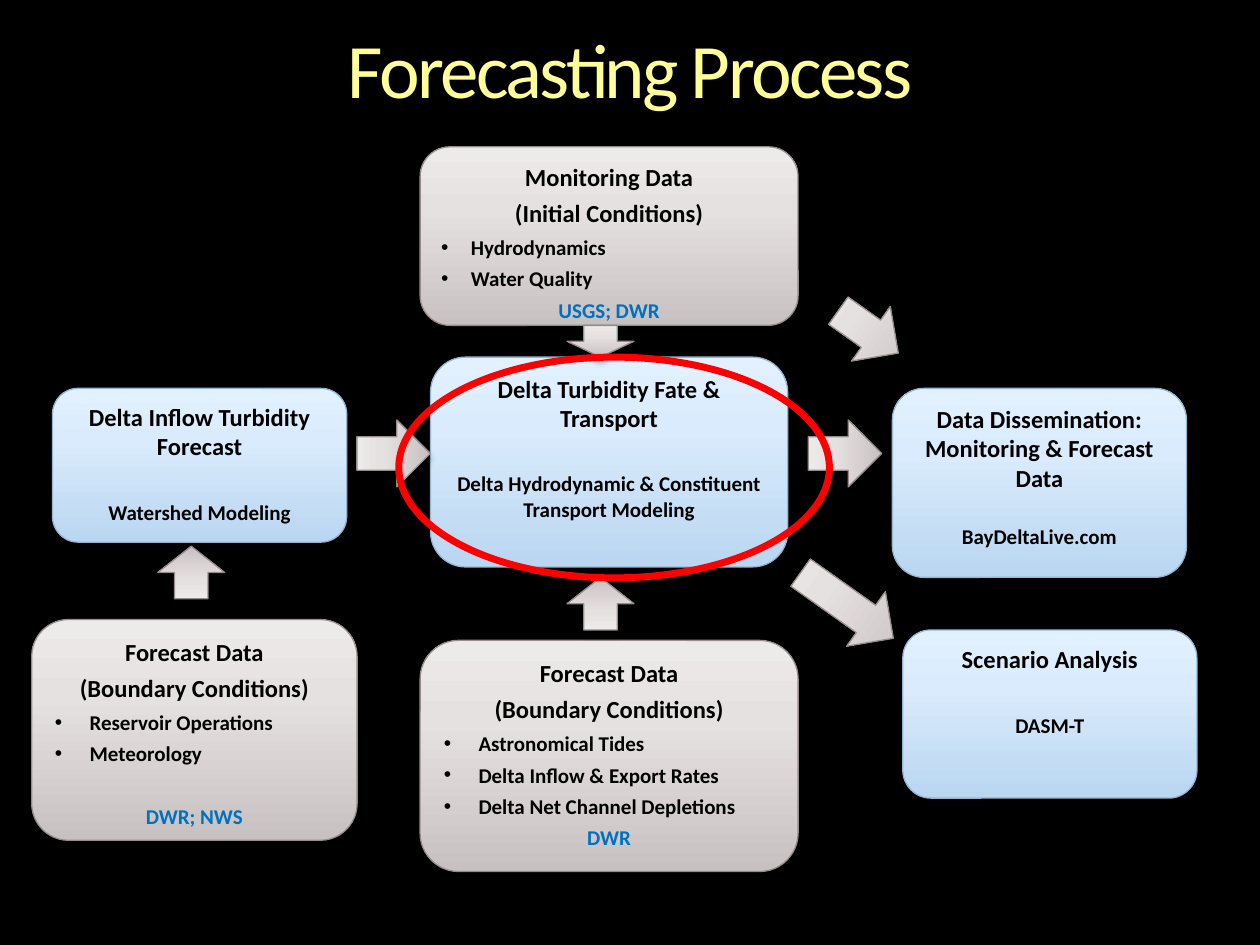
from lxml.etree import SubElement
from pptx import Presentation
from pptx.dml.color import RGBColor
from pptx.enum.shapes import MSO_SHAPE as SHAPE
from pptx.enum.text import MSO_ANCHOR as ANCHOR, PP_ALIGN as ALIGN
from pptx.oxml.ns import qn
from pptx.util import Cm, Pt

FONT = "Calibri"
BLACK = RGBColor(0x00, 0x00, 0x00)
YELLOW = RGBColor(0xFF, 0xFF, 0x99)
RED = RGBColor(0xFF, 0x00, 0x00)
AGENCY = RGBColor(0x00, 0x70, 0xC0)
GREY = (RGBColor(0xC8, 0xC1, 0xC1), RGBColor(0xE6, 0xE1, 0xE1),
        RGBColor(0xED, 0xEA, 0xEA), RGBColor(0x96, 0x8C, 0x8C))
BLUE = (RGBColor(0xBA, 0xD6, 0xF1), RGBColor(0xD9, 0xEB, 0xFC),
        RGBColor(0xE2, 0xF1, 0xFF), RGBColor(0x94, 0xB6, 0xD2))
STOPS = (0, 65, 100)

# left, top, width, height; headings; bullets; bullet indent; agencies; gap above agencies
DATA_BOXES = [
    ((8.47, 2.96, 7.62, 3.6), ["Monitoring Data", "(Initial Conditions)"],
     ["Hydrodynamics", "Water Quality"], 0.6, "USGS; DWR", 0),
    ((8.47, 12.91, 7.62, 4.66), ["Forecast Data", "(Boundary Conditions)"],
     ["Astronomical Tides", "Delta Inflow & Export Rates", "Delta Net Channel Depletions"],
     0.7, "DWR", 0),
    ((0.64, 12.49, 6.56, 4.45), ["Forecast Data", "(Boundary Conditions)"],
     ["Reservoir Operations", "Meteorology"], 0.7, "DWR; NWS", 18),
]
MODEL_BOXES = [
    ((1.06, 7.83, 5.93, 3.1), "Delta Inflow Turbidity Forecast", "Watershed Modeling", 18),
    ((8.68, 7.2, 7.2, 4.23), "Delta Turbidity Fate & Transport",
     "Delta Hydrodynamic & Constituent Transport Modeling", 18),
    ((17.99, 7.83, 5.93, 3.81), "Data Dissemination: Monitoring & Forecast Data",
     "BayDeltaLive.com", 14),
    ((18.2, 12.7, 5.93, 3.39), "Scenario Analysis", "DASM-T", 18),
]
ARROW_W = 1.35
ARROWS = [
    (11.43, 6.56, 0.64, 0),
    (11.43, 11.64, 1.06, 180),
    (7.26, 8.4, 1.48, 270),
    (3.18, 11.01, 1.06, 180),
    (16.36, 8.4, 1.48, 270),
    (16.83, 5.95, 1.48, 305.3),
    (16.4, 11.06, 2.29, 305.3),
]
FOCUS = (8.04, 7.2, 8.68, 4.45)


def add_color(parent, rgb):
    return SubElement(parent, qn("a:srgbClr"), val=str(rgb))


def add_block(slide, kind, box, palette):
    sp = slide.shapes.add_shape(kind, *map(Cm, box))
    sp.fill.gradient()
    sp.fill.gradient_angle = 90
    stops = sp._element.spPr.find(qn("a:gradFill")).find(qn("a:gsLst"))
    for old in list(stops):
        stops.remove(old)
    for pos, rgb in zip(STOPS, palette):
        add_color(SubElement(stops, qn("a:gs"), pos=str(pos * 1000)), rgb)
    sp.line.color.rgb = palette[-1]
    sp.line.width = Pt(0.75)
    sp.shadow.inherit = False
    effects = sp._element.spPr.find(qn("a:effectLst"))
    shadow = SubElement(effects, qn("a:outerShdw"), blurRad=str(Pt(4)), dist=str(Pt(3)),
                        dir="5400000", rotWithShape="0")
    SubElement(add_color(shadow, BLACK), qn("a:alpha"), val="35000")
    return sp


def add_text(sp, lines):
    tf = sp.text_frame
    tf.word_wrap = True
    tf.vertical_anchor = ANCHOR.TOP
    for i, (text, size, color, indent, gap) in enumerate(lines):
        p = tf.paragraphs[0] if i == 0 else tf.add_paragraph()
        p.alignment = ALIGN.CENTER
        if indent:
            p.alignment = ALIGN.LEFT
            pPr = p._p.get_or_add_pPr()
            pPr.set("marL", str(Cm(indent)))
            pPr.set("indent", str(-Cm(indent)))
            SubElement(pPr, qn("a:buFont"), typeface="Arial")
            SubElement(pPr, qn("a:buChar"), char="•")
        if gap:
            p.space_before = Pt(gap)
        p.space_after = Pt(size * 0.29)
        r = p.add_run()
        r.text = text
        r.font.name = FONT
        r.font.size = Pt(size)
        r.font.bold = True
        r.font.color.rgb = color


def add_title(slide, text):
    sp = slide.shapes.title
    sp.left, sp.top, sp.width, sp.height = Cm(0), Cm(0.64), Cm(25.4), Cm(1.7)
    tf = sp.text_frame
    tf.margin_left = tf.margin_top = tf.margin_right = tf.margin_bottom = 0
    tf.vertical_anchor = ANCHOR.MIDDLE
    p = tf.paragraphs[0]
    p.alignment = ALIGN.CENTER
    p.line_spacing = 0.9
    r = p.add_run()
    r.text = text
    r.font.name = FONT
    r.font.size = Pt(44)
    r.font.color.rgb = YELLOW
    r._r.get_or_add_rPr().set("spc", "-150")


def main():
    prs = Presentation()
    prs.slide_width, prs.slide_height = Cm(25.4), Cm(19.05)
    s = prs.slides.add_slide(prs.slide_layouts[5])
    s.background.fill.solid()
    s.background.fill.fore_color.rgb = BLACK
    add_title(s, "Forecasting Process")

    for box, heads, bullets, indent, agencies, gap in DATA_BOXES:
        lines = [(t, 14, BLACK, 0, 0) for t in heads]
        lines += [(t, 12, BLACK, indent, 0) for t in bullets]
        lines.append((agencies, 12, AGENCY, 0, gap))
        add_text(add_block(s, SHAPE.ROUNDED_RECTANGLE, box, GREY), lines)

    for box, head, detail, gap in MODEL_BOXES:
        lines = [(head, 14, BLACK, 0, 0), (detail, 12, BLACK, 0, gap)]
        add_text(add_block(s, SHAPE.ROUNDED_RECTANGLE, box, BLUE), lines)

    for left, top, length, angle in ARROWS:
        arrow = add_block(s, SHAPE.DOWN_ARROW, (left, top, ARROW_W, length), GREY)
        arrow.rotation = angle

    focus = s.shapes.add_shape(SHAPE.OVAL, *map(Cm, FOCUS))
    focus.fill.background()
    focus.line.color.rgb = RED
    focus.line.width = Pt(4)
    focus.shadow.inherit = False

    prs.save("out.pptx")


if __name__ == "__main__":
    main()
